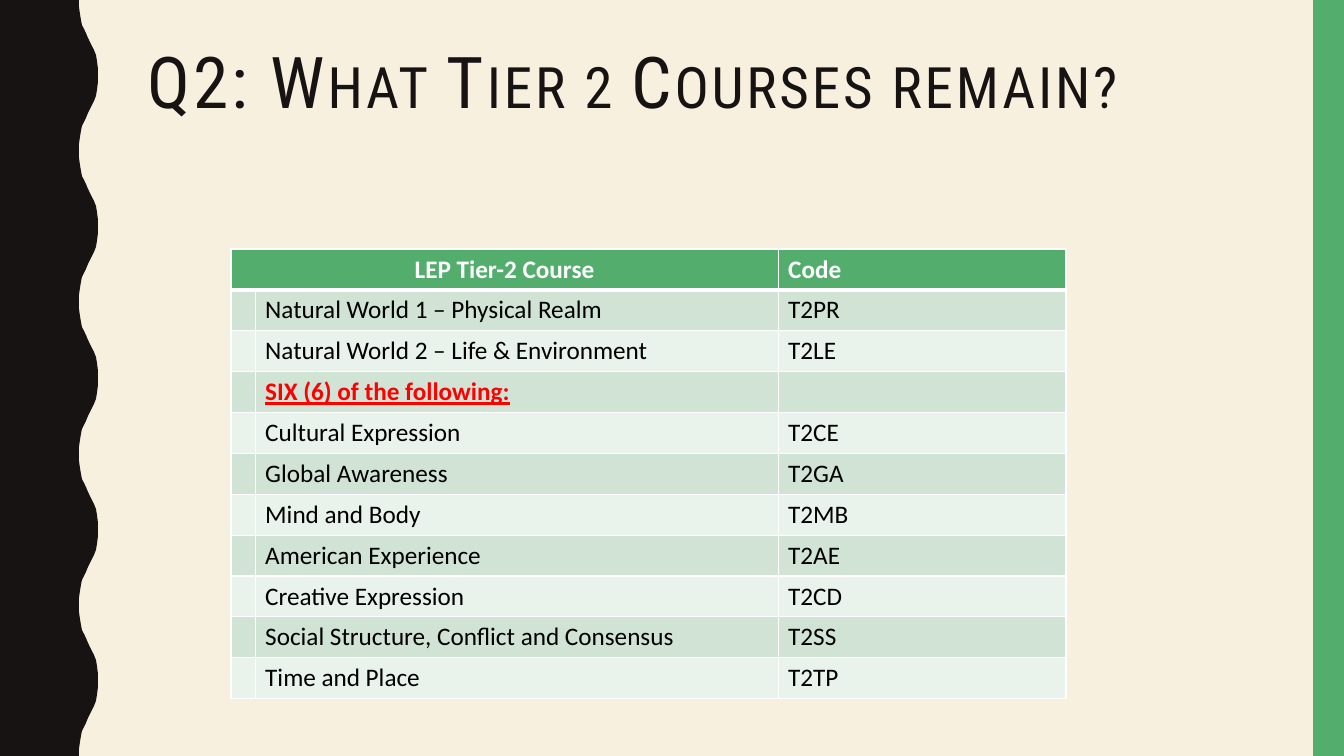
from lxml import etree
from pptx import Presentation
from pptx.dml.color import RGBColor
from pptx.enum.shapes import MSO_SHAPE
from pptx.enum.text import MSO_ANCHOR, PP_ALIGN
from pptx.oxml.ns import qn
from pptx.util import Emu, Pt

RECTANGLE = MSO_SHAPE.RECTANGLE
TOP = MSO_ANCHOR.TOP
CENTER = PP_ALIGN.CENTER

PX = 914400 / 100.8
SLIDE_W, SLIDE_H = 1344, 756
COLORS = {
    "cream": "F7F0DF", "ink": "171312", "green": "53AE6E", "white": "FFFFFF",
    "black": "000000", "red": "FF0000", "band_dark": "D1E3D5", "band_light": "E9F2EB",
}


def px(length):
    return Emu(round(length * PX))


def paint(fill, color):
    fill.solid()
    fill.fore_color.rgb = RGBColor.from_string(COLORS[color])


prs = Presentation()
prs.slide_width, prs.slide_height = px(SLIDE_W), px(SLIDE_H)
slide = prs.slides.add_slide(prs.slide_layouts[6])
paint(slide.background.fill, "cream")

# Wavy left edge: five periods, each a half wave out and its mirror back
WAVES = 5
half_wave = [(79, 0), (79, 7), (80, 14), (81, 20), (82, 25), (84, 29), (86, 33), (88, 38),
             (90, 42), (92, 46), (94, 50), (96, 55), (97, 61), (98, 69), (98, 76)]
period = SLIDE_H / WAVES
full_wave = half_wave + [(x, period - y) for x, y in reversed(half_wave[:-1])]
edge = [(x, round(wave * period + y)) for wave in range(WAVES) for x, y in full_wave]
outline = slide.shapes.build_freeform(0, 0, scale=PX)
outline.add_line_segments(edge + [(0, SLIDE_H)], close=True)
wavy_band = outline.convert_to_shape()

# Right stripe
stripe = slide.shapes.add_shape(RECTANGLE, px(1313), 0, px(31), px(SLIDE_H))
for band, color in ((wavy_band, "ink"), (stripe, "green")):
    paint(band.fill, color)
    band.line.fill.background()
    band.shadow.inherit = False

# Title
title = slide.shapes.add_textbox(px(138), px(42), px(1122), px(164)).text_frame
title.word_wrap = True
title.vertical_anchor = TOP
heading = title.paragraphs[0]
heading.line_spacing = 0.9
for words, caps in (("Q2: ", "none"), ("What Tier 2 Courses remain?", "small")):
    run = heading.add_run()
    run.text = words
    run.font.name, run.font.size = "Roboto Condensed", Pt(51)
    paint(run.font.fill, "ink")
    for name, value in {"cap": caps, "spc": "200"}.items():
        run.font._element.set(name, value)

# Course table
courses = [
    ("LEP Tier-2 Course", "", "Code"),
    ("", "Natural World 1 – Physical Realm", "T2PR"),
    ("", "Natural World 2 – Life & Environment", "T2LE"),
    ("", "SIX (6) of the following:", ""),
    ("", "Cultural Expression", "T2CE"),
    ("", "Global Awareness", "T2GA"),
    ("", "Mind and Body", "T2MB"),
    ("", "American Experience", "T2AE"),
    ("", "Creative Expression", "T2CD"),
    ("", "Social Structure, Conflict and Consensus", "T2SS"),
    ("", "Time and Place", "T2TP"),
]
CHOICE_ROW = 3
col_widths = [24, 523, 288]
table = slide.shapes.add_table(len(courses), len(col_widths), px(231), px(249),
                               px(sum(col_widths)), px(450)).table
for column, width in zip(table.columns, col_widths):
    column.width = px(width)
table.cell(0, 0).merge(table.cell(0, 1))

for r, course in enumerate(courses):
    if r == 0:
        band, ink = "green", "white"
    else:
        band = "band_dark" if r % 2 else "band_light"
        ink = "red" if r == CHOICE_ROW else "black"
    font_format = {"name": "Calibri", "size": Pt(18), "bold": r in (0, CHOICE_ROW),
                   "underline": r == CHOICE_ROW}
    borders = {"lnL": 1, "lnR": 1, "lnT": 3 if r == 1 else 1, "lnB": 3 if r == 0 else 1}
    for c, words in enumerate(course):
        cell = table.cell(r, c)
        cell_props = cell._tc.get_or_add_tcPr()
        for side, points in borders.items():
            border = etree.SubElement(cell_props, qn(f"a:{side}"), w=str(Pt(points)))
            border_fill = etree.SubElement(border, qn("a:solidFill"))
            etree.SubElement(border_fill, qn("a:srgbClr"), val=COLORS["white"])
        paint(cell.fill, band)
        if words:
            run = cell.text_frame.paragraphs[0].add_run()
            run.text = words
            for name, value in font_format.items():
                setattr(run.font, name, value)
            paint(run.font.fill, ink)
table.cell(0, 0).text_frame.paragraphs[0].alignment = CENTER

prs.save("out.pptx")
